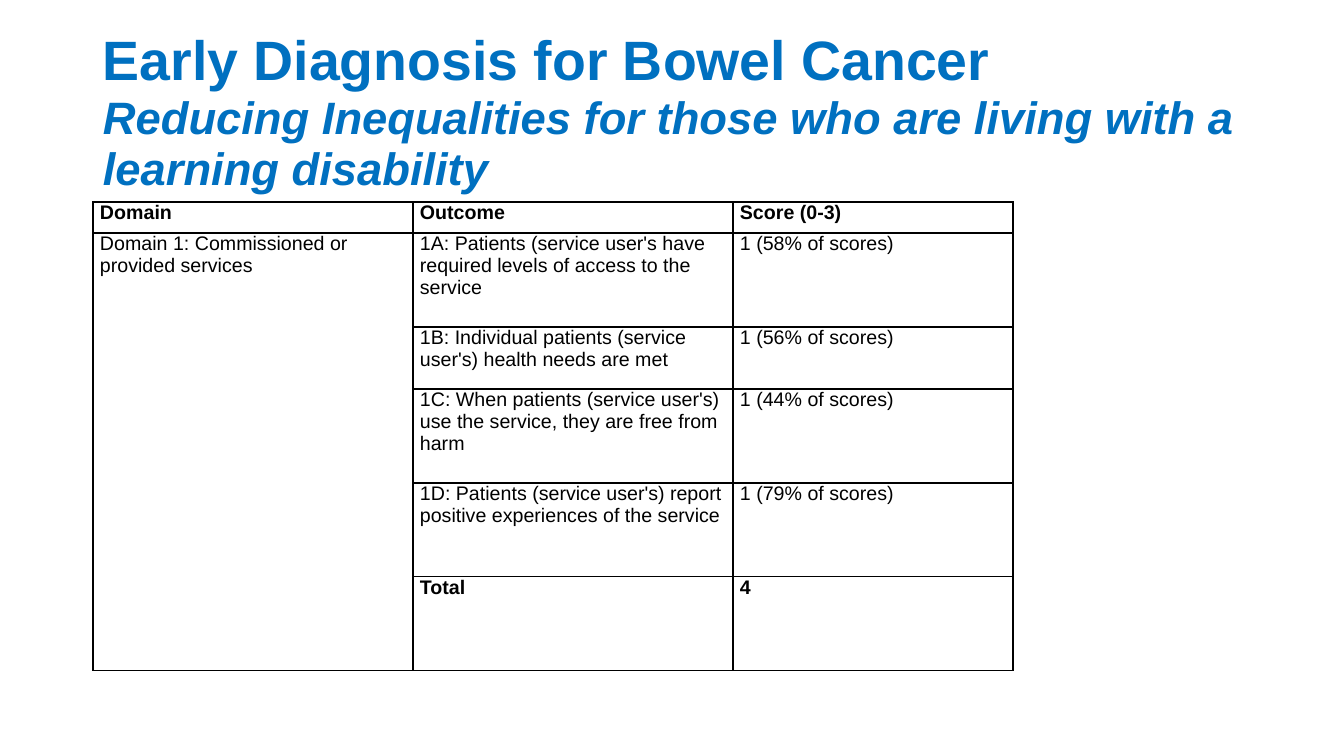
"""Build the bowel cancer early diagnosis slide with its outcome score table."""
from pptx import Presentation
from pptx.dml.color import RGBColor
from pptx.enum.text import MSO_ANCHOR
from pptx.oxml import parse_xml
from pptx.oxml.ns import nsdecls
from pptx.util import Pt

TITLE = [
    ("Early Diagnosis for Bowel Cancer", 39.6, False),
    ("Reducing Inequalities for those who are living with a learning disability", 32.4, True),
]
HEADINGS = ("Domain", "Outcome", "Score (0-3)")
DOMAIN = "Domain 1: Commissioned or provided services"
SCORES = [
    ("1A: Patients (service user's have required levels of access to the service", "1 (58% of scores)"),
    ("1B: Individual patients (service user's) health needs are met", "1 (56% of scores)"),
    ("1C: When patients (service user's) use the service, they are free from harm", "1 (44% of scores)"),
    ("1D: Patients (service user's) report positive experiences of the service", "1 (79% of scores)"),
]
TOTAL = ("Total", "4")
COLUMN_WIDTHS = (320, 320, 280)
ROW_HEIGHTS = (31, 94, 62, 94, 94, 94)
BLUE, BLACK = "0070C0", "000000"


def px(length):
    return round(length * 914400 / 100.8)


def color(value):
    return RGBColor.from_string(value)


def write(para, text, size=14, bold=False, italic=False, fill=BLACK, spacing=1.0):
    para.line_spacing = spacing
    span = para.add_run()
    span.text = text
    font = span.font
    font.name, font.size, font.bold, font.italic = "Arial", Pt(size), bold, italic
    font.color.rgb = color(fill)


def add_borders(cell):
    properties = cell._tc.get_or_add_tcPr()
    for index, side in enumerate(("lnL", "lnR", "lnT", "lnB")):
        properties.insert(index, parse_xml(
            f'<a:{side} {nsdecls("a")} w="{Pt(1)}"><a:solidFill>'
            f'<a:srgbClr val="{BLACK}"/></a:solidFill></a:{side}>'))


def add_title(page):
    frame = page.shapes.add_textbox(px(93), px(40), px(1159), px(146)).text_frame
    frame.word_wrap = True
    frame.vertical_anchor = MSO_ANCHOR.MIDDLE
    for index, (text, size, italic) in enumerate(TITLE):
        para = frame.add_paragraph() if index else frame.paragraphs[0]
        write(para, text, size=size, bold=True, italic=italic, fill=BLUE, spacing=0.94)


def add_scores(page):
    rows = [HEADINGS] + [("", *score) for score in SCORES + [TOTAL]]
    rows[1] = (DOMAIN, *SCORES[0])
    table = page.shapes.add_table(
        len(rows), len(HEADINGS), px(93), px(202),
        px(sum(COLUMN_WIDTHS)), px(sum(ROW_HEIGHTS))).table
    table.first_row = table.horz_banding = False
    for column, width in zip(table.columns, COLUMN_WIDTHS):
        column.width = px(width)
    for row, height in zip(table.rows, ROW_HEIGHTS):
        row.height = px(height)
    table.cell(1, 0).merge(table.cell(len(rows) - 1, 0))
    for row_index, texts in enumerate(rows):
        for column_index, text in enumerate(texts):
            cell = table.cell(row_index, column_index)
            cell.margin_left = cell.margin_right = px(7)
            cell.margin_top = cell.margin_bottom = 0
            cell.fill.background()
            add_borders(cell)
            if text:
                write(cell.text_frame.paragraphs[0], text,
                      bold=row_index in (0, len(rows) - 1))


def main():
    deck = Presentation()
    deck.slide_width, deck.slide_height = px(1344), px(756)
    page = deck.slides.add_slide(deck.slide_layouts[6])
    add_title(page)
    add_scores(page)
    deck.save("out.pptx")


if __name__ == "__main__":
    main()
